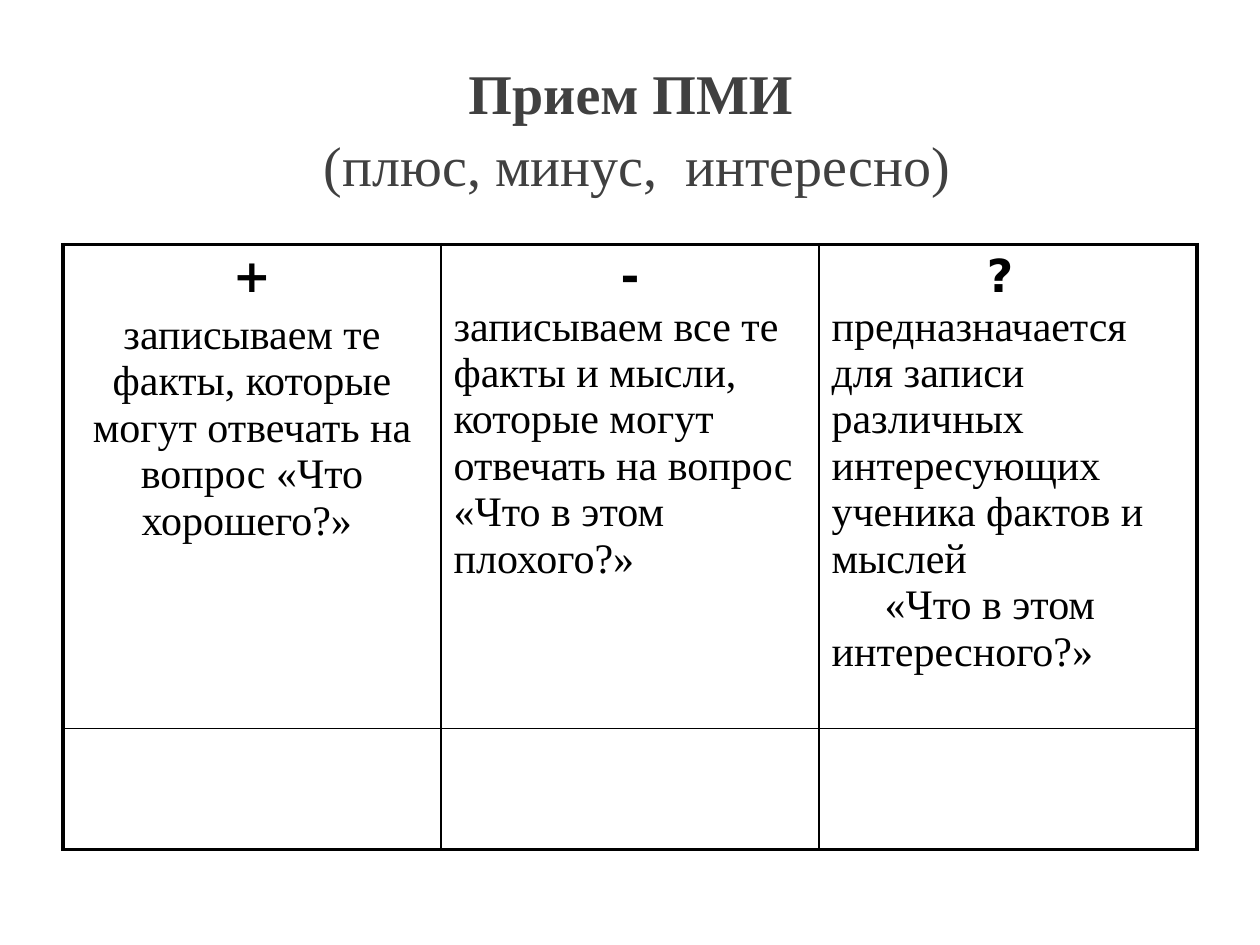
"""Build the slide on the plus, minus, interesting method."""
from lxml import etree
from pptx import Presentation
from pptx.dml.color import RGBColor
from pptx.enum.text import MSO_ANCHOR, PP_ALIGN
from pptx.oxml.ns import qn
from pptx.util import Inches, Pt

LEFT, CENTER = PP_ALIGN.LEFT, PP_ALIGN.CENTER
MIDDLE = MSO_ANCHOR.MIDDLE
COLORS = {"title": "404040", "ink": "000000"}
SERIF, SANS = "Times New Roman", "DejaVu Sans"
THICK, THIN = 2.21, 0.96


def style(para, name, size, color, align, space=0):
    para.font.name = name
    para.font.size = Pt(size)
    para.font.color.rgb = RGBColor.from_string(COLORS[color])
    para.alignment = align
    para.space_before = Pt(space)


def border(cell, side, width):
    props = cell._tc.get_or_add_tcPr()
    line = etree.SubElement(props, qn(f"a:ln{side}"), w=str(Pt(width)))
    fill = etree.SubElement(line, qn("a:solidFill"))
    etree.SubElement(fill, qn("a:srgbClr"), val=COLORS["ink"])


prs = Presentation()
prs.slide_width, prs.slide_height = Inches(10), Inches(7.5)
slide = prs.slides.add_slide(prs.slide_layouts[6])

box = slide.shapes.add_textbox(Inches(0.63), Inches(0.33), Inches(8.75), Inches(1.33))
frame = box.text_frame
frame.word_wrap = True
frame.vertical_anchor = MIDDLE
title = frame.paragraphs[0]
style(title, SERIF, 32, "title", CENTER)
title.line_spacing = 1.08
name = title.add_run()
name.text = "Прием ПМИ"
name.font.bold = True
title.add_line_break()
title.add_run().text = " (плюс, минус,  интересно)"

columns = [
    ("+", CENTER, 4.8, [
        "записываем те факты, которые могут отвечать на вопрос «Что хорошего?» "]),
    ("-", LEFT, 0, [
        "записываем все те факты и мысли, которые могут отвечать на вопрос "
        "«Что в этом плохого?»"]),
    ("? ", LEFT, 0, [
        "предназначается для записи различных интересующих ученика фактов и мыслей",
        "«Что в этом интересного?»"]),
]
heights = [3.84, 0.96]
rows, cols = len(heights), len(columns)
table = slide.shapes.add_table(
    rows, cols, Inches(0.5), Inches(1.94), Inches(9), Inches(sum(heights))).table
table.first_row = table.horz_banding = False
for row, height in zip(table.rows, heights):
    row.height = Inches(height)

for r in range(rows):
    for c in range(cols):
        cell = table.cell(r, c)
        edges = {"L": c == 0, "R": c == cols - 1, "T": r == 0, "B": r == rows - 1}
        for side, outer in edges.items():
            border(cell, side, THICK if outer else THIN)
        cell.fill.background()

for c, (sign, align, space, texts) in enumerate(columns):
    frame = table.cell(0, c).text_frame
    head = frame.paragraphs[0]
    head.text = sign
    style(head, SANS, 26, "ink", CENTER, 5.2)
    head.font.bold = True
    for i, text in enumerate(texts):
        para = frame.add_paragraph()
        para.text = text
        style(para, SERIF, 24, "ink", align, space)
        if i:
            para._p.get_or_add_pPr().set("indent", str(Inches(0.42)))

prs.save("out.pptx")
